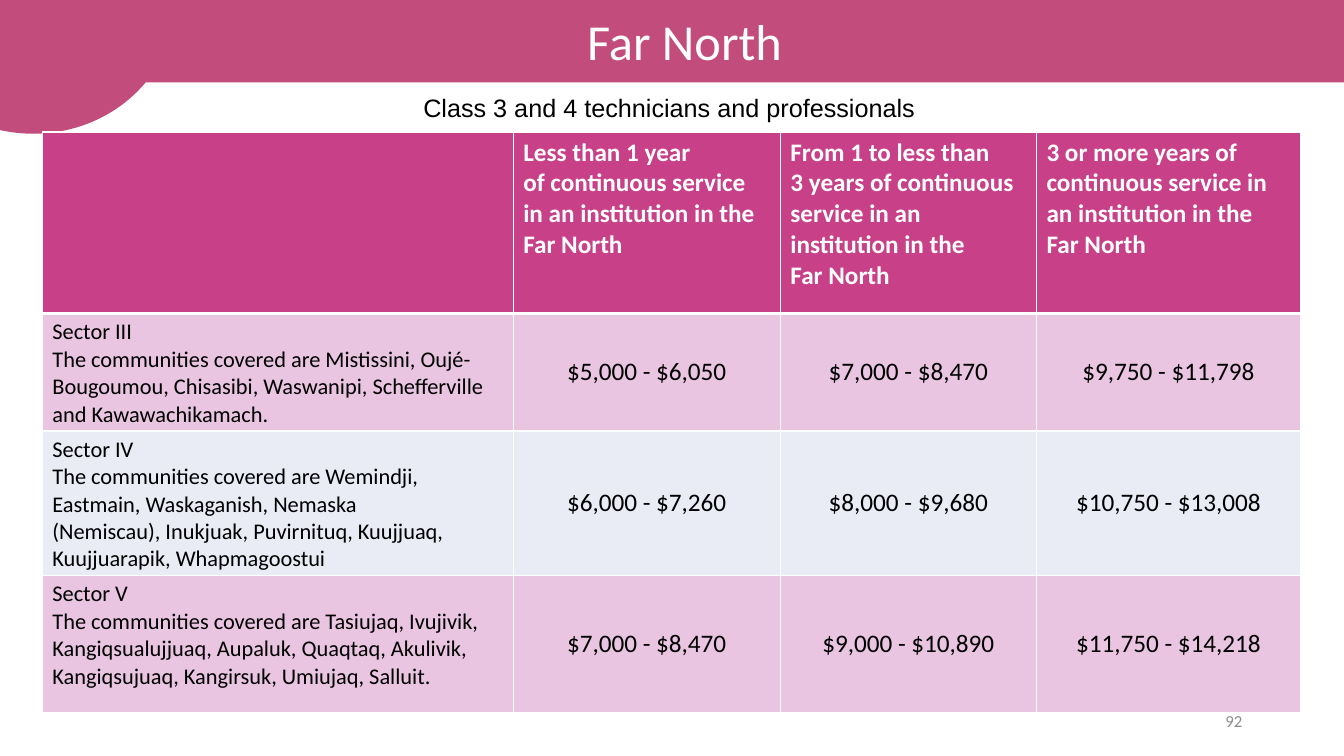
from lxml import etree
from pptx import Presentation
from pptx.dml.color import RGBColor
from pptx.enum import shapes, text
from pptx.oxml.ns import qn
from pptx.util import Inches, Pt

COLORS = {"banner": "C24C7B", "header": "C84087", "pink": "E9C5E1",
          "pale": "E9EBF5", "white": "FFFFFF", "black": "000000", "gray": "8C8C8C"}

TITLE = "Far North"
SUBTITLE = "Class 3 and 4 technicians and professionals"
PAGE_NUMBER = "92"

# Each cell is a list of paragraphs
HEADER = [
    [],
    ["Less than 1 year", "of continuous service in an institution in the Far North"],
    ["From 1 to less than", "3 years of continuous service in an institution in the\vFar North"],
    ["3 or more years of continuous service in an institution in the", "Far North"],
]
SECTORS = [
    [["Sector III",
      "The communities covered are Mistissini, Oujé-Bougoumou, Chisasibi, "
      "Waswanipi, Schefferville and Kawawachikamach."],
     ["$5,000 - $6,050"], ["$7,000 - $8,470"], ["$9,750 - $11,798"]],
    [["Sector IV",
      "The communities covered are Wemindji, Eastmain, Waskaganish, Nemaska",
      "(Nemiscau), Inukjuak, Puvirnituq, Kuujjuaq, Kuujjuarapik, Whapmagoostui"],
     ["$6,000 - $7,260"], ["$8,000 - $9,680"], ["$10,750 - $13,008"]],
    [["Sector V",
      "The communities covered are Tasiujaq, Ivujivik, Kangiqsualujjuaq, Aupaluk, "
      "Quaqtaq, Akulivik, Kangiqsujuaq, Kangirsuk, Umiujaq, Salluit."],
     ["$7,000 - $8,470"], ["$9,000 - $10,890"], ["$11,750 - $14,218"]],
]
COLUMN_WIDTHS = [4.67, 2.65, 2.54, 2.62]
ROW_HEIGHTS = [1.8, 1.16, 1.43, 1.36]

LEFT, CENTER, RIGHT = text.PP_ALIGN.LEFT, text.PP_ALIGN.CENTER, text.PP_ALIGN.RIGHT
TOP, MIDDLE = text.MSO_ANCHOR.TOP, text.MSO_ANCHOR.MIDDLE


def color(name):
    return RGBColor.from_string(COLORS[name])


def write(frame, paragraphs, size=18, font="Calibri", fill="black",
          bold=False, align=LEFT, anchor=TOP):
    frame.word_wrap = True
    frame.vertical_anchor = anchor
    for index, content in enumerate(paragraphs):
        paragraph = frame.add_paragraph() if index else frame.paragraphs[0]
        paragraph.text = content
        paragraph.alignment = align
        for run in paragraph.runs:
            run.font.size = Pt(size)
            run.font.name = font
            run.font.bold = bold
            run.font.color.rgb = color(fill)


def add_banner_shape(slide, kind, *box):
    shape = slide.shapes.add_shape(kind, *map(Inches, box))
    shape.shadow.inherit = False
    shape.fill.solid()
    shape.fill.fore_color.rgb = color("banner")
    shape.line.color.rgb = color("banner")
    shape.line.width = Pt(1)
    return shape


def add_label(slide, box, content, **style):
    label = slide.shapes.add_textbox(*map(Inches, box))
    write(label.text_frame, [content], **style)


def set_borders(cell, **widths):
    properties = cell._tc.get_or_add_tcPr()
    for index, side in enumerate("LRTB"):
        line = etree.Element(qn("a:ln" + side), w=str(Pt(widths.get(side, 1))))
        fill = etree.SubElement(line, qn("a:solidFill"))
        etree.SubElement(fill, qn("a:srgbClr"), val=COLORS["white"])
        properties.insert(index, line)


def add_rates_table(slide):
    rows = [HEADER] + SECTORS
    table = slide.shapes.add_table(
        len(rows), len(COLUMN_WIDTHS), Inches(0.42), Inches(1.31),
        Inches(sum(COLUMN_WIDTHS)), Inches(sum(ROW_HEIGHTS))).table
    for column, width in zip(table.columns, COLUMN_WIDTHS):
        column.width = Inches(width)
    for r, (row, height) in enumerate(zip(rows, ROW_HEIGHTS)):
        table.rows[r].height = Inches(height)
        background = "header" if r == 0 else "pink" if r % 2 else "pale"
        for c, paragraphs in enumerate(row):
            cell = table.cell(r, c)
            cell.fill.solid()
            cell.fill.fore_color.rgb = color(background)
            if r == 0:
                style = {"fill": "white", "bold": True}
            elif c == 0:
                style = {"size": 16}
            else:
                style = {"align": CENTER}
                cell.vertical_anchor = MIDDLE
            write_cell(cell, paragraphs, style)
            # Thick rule between the header and the sectors
            set_borders(cell, T=3 if r == 1 else 1, B=3 if r == 0 else 1)


def write_cell(cell, paragraphs, style):
    anchor = cell.vertical_anchor
    write(cell.text_frame, paragraphs, **style)
    cell.vertical_anchor = anchor


def main():
    presentation = Presentation()
    presentation.slide_width, presentation.slide_height = Inches(13.33), Inches(7.5)
    slide = presentation.slides.add_slide(presentation.slide_layouts[6])

    # Banner with the title and corner circle
    banner = add_banner_shape(slide, shapes.MSO_SHAPE.ROUNDED_RECTANGLE, 0, 0, 13.58, 0.81)
    write(banner.text_frame, [TITLE], size=36, fill="white", align=CENTER, anchor=MIDDLE)
    add_banner_shape(slide, shapes.MSO_SHAPE.OVAL, -1.08, -1.33, 2.82, 2.65)

    # Page number and subtitle
    add_label(slide, (9.42, 6.95, 3, 0.4), PAGE_NUMBER,
              size=12, fill="gray", align=RIGHT, anchor=MIDDLE)
    add_label(slide, (4.1, 0.87, 5.13, 0.4), SUBTITLE, font="Arial")

    # Rates by sector and length of service
    add_rates_table(slide)
    presentation.save("out.pptx")


if __name__ == "__main__":
    main()
